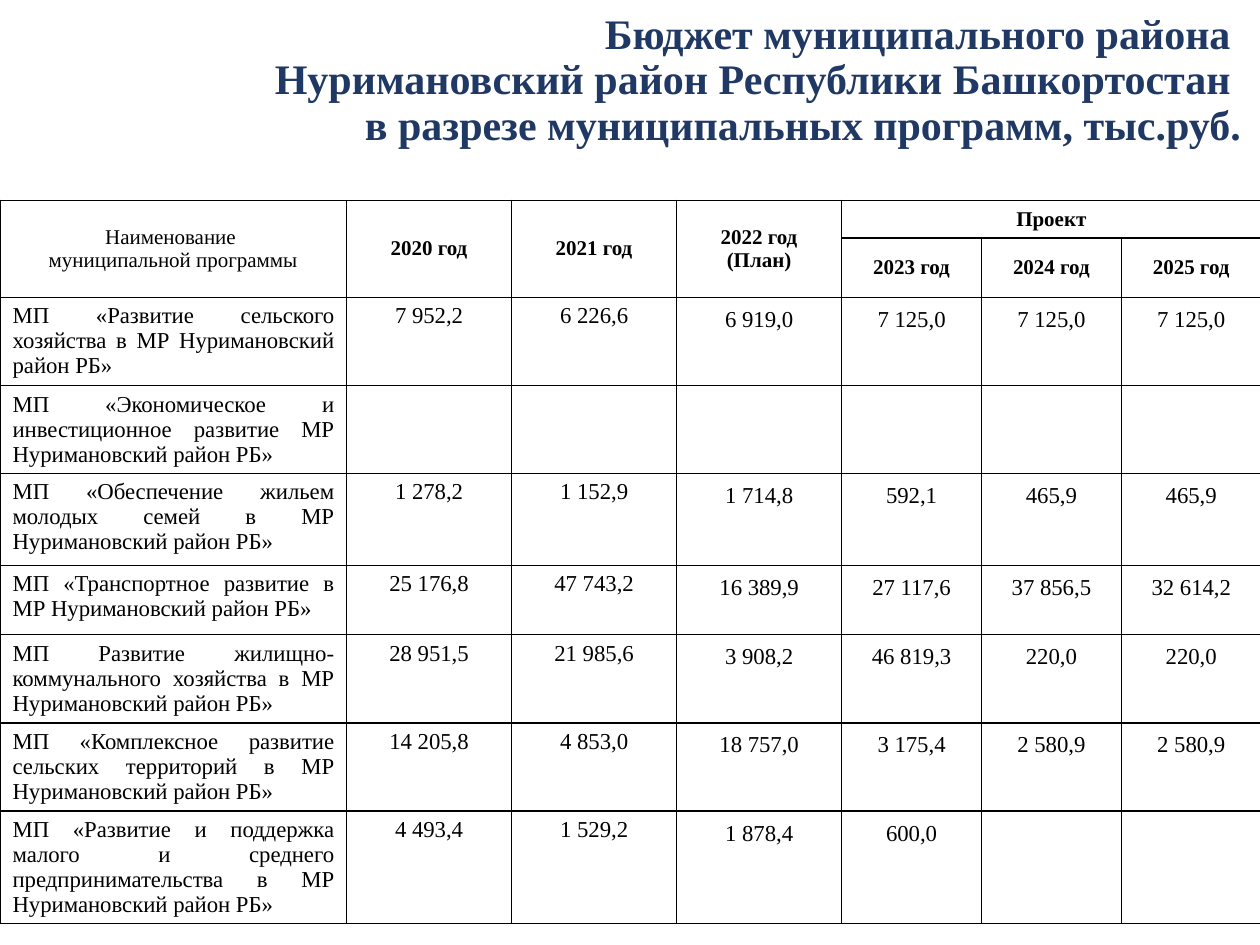
from dataclasses import dataclass

from lxml import etree
from pptx import Presentation
from pptx.dml.color import RGBColor
from pptx.enum import text
from pptx.oxml import ns
from pptx.util import Inches, Pt

ALIGN = text.PP_ALIGN
MID = text.MSO_ANCHOR.MIDDLE
TOP = text.MSO_ANCHOR.TOP


@dataclass(frozen=True)
class Theme:
    font: str = "Times New Roman"
    ink: str = "000000"
    navy: str = "203864"
    paper: str = "FFFFFF"
    title: int = 24
    head: int = 12
    body: int = 13
    rule: int = 1


TITLE = (
    "Бюджет муниципального района \v"
    "Нуримановский район Республики Башкортостан \v"
    "в разрезе муниципальных программ, тыс.руб."
)
COLS = [2.75] + [1.31] * 3 + [1.11] * 3
ROWS = [0.3, 0.47, 0.7, 0.69, 0.73, 0.55, 0.7, 0.7, 0.89]
HEADS = [
    ["Наименование \nмуниципальной программы", "2020 год", "2021 год", "2022 год (План)", "Проект", "", ""],
    ["", "", "", "", "2023 год", "2024 год", "2025 год"],
]
DATA = [
    ["МП «Развитие сельского хозяйства в МР Нуримановский район РБ»",
     "7 952,2", "6 226,6", "6 919,0", "7 125,0", "7 125,0", "7 125,0"],
    ["МП «Экономическое и инвестиционное развитие МР Нуримановский район РБ»",
     "", "", "", "", "", ""],
    ["МП «Обеспечение жильем молодых семей в МР Нуримановский район РБ»",
     "1 278,2", "1 152,9", "1 714,8", "592,1", "465,9", "465,9"],
    ["МП «Транспортное развитие в МР Нуримановский район РБ»",
     "25 176,8", "47 743,2", "16 389,9", "27 117,6", "37 856,5", "32 614,2"],
    ["МП Развитие жилищно-коммунального хозяйства в МР Нуримановский район РБ»",
     "28 951,5", "21 985,6", "3 908,2", "46 819,3", "220,0", "220,0"],
    ["МП «Комплексное развитие сельских территорий в МР Нуримановский район РБ»",
     "14 205,8", "4 853,0", "18 757,0", "3 175,4", "2 580,9", "2 580,9"],
    ["МП «Развитие и поддержка малого и среднего предпринимательства в МР Нуримановский район РБ»",
     "4 493,4", "1 529,2", "1 878,4", "600,0", "", ""],
]


def write(frame, words, *, font, size, color, bold=False, align=ALIGN.CENTER, space=1.0):
    frame.text = words
    for par in frame.paragraphs:
        par.alignment = align
        par.line_spacing = space
        for run in par.runs:
            run.font.name = font
            run.font.size = Pt(size)
            run.font.bold = bold
            run.font.color.rgb = RGBColor.from_string(color)


class Page:
    def __init__(self, deck, theme):
        self.theme = theme
        self.slide = deck.slides.add_slide(deck.slide_layouts[5])

    def title(self, words, left, top, width, height):
        box = self.slide.shapes.title
        box.left, box.top = Inches(left), Inches(top)
        box.width, box.height = Inches(width), Inches(height)
        frame = box.text_frame
        frame.word_wrap = True
        frame.auto_size = text.MSO_AUTO_SIZE.NONE
        frame.vertical_anchor = MID
        look = self.theme
        write(frame, words, font=look.font, size=look.title, color=look.navy,
              bold=True, align=ALIGN.RIGHT, space=0.9)

    def table(self, left, top, cols, rows):
        frame = self.slide.shapes.add_table(
            len(rows), len(cols), Inches(left), Inches(top),
            Inches(sum(cols)), Inches(sum(rows)))
        grid = frame.table
        grid.first_row = grid.horz_banding = False
        for col, width in zip(grid.columns, cols):
            col.width = Inches(width)
        for row, height in zip(grid.rows, rows):
            row.height = Inches(height)
        return grid

    def cell(self, cell, words, *, size, anchor=TOP, **form):
        look = self.theme
        self.border(cell)
        cell.fill.solid()
        cell.fill.fore_color.rgb = RGBColor.from_string(look.paper)
        cell.vertical_anchor = anchor
        if words:
            write(cell.text_frame, words, font=look.font, size=size, color=look.ink, **form)

    def border(self, cell):
        props = cell._tc.get_or_add_tcPr()
        for side in ("lnL", "lnR", "lnT", "lnB"):
            line = etree.SubElement(props, ns.qn(f"a:{side}"), w=str(Pt(self.theme.rule)))
            fill = etree.SubElement(line, ns.qn("a:solidFill"))
            etree.SubElement(fill, ns.qn("a:srgbClr"), val=self.theme.ink)


def main():
    deck = Presentation()
    deck.slide_width, deck.slide_height = Inches(10), Inches(7.5)
    theme = Theme()
    page = Page(deck, theme)
    page.title(TITLE, 0, 0.21, 9.95, 0.87)
    grid = page.table(0, 1.59, COLS, ROWS)
    for r, row in enumerate(HEADS + DATA):
        for c, words in enumerate(row):
            if r < len(HEADS):
                form = dict(size=theme.head, anchor=MID, bold=c > 0)
            else:
                form = dict(size=theme.body, space=1.15 if c > 2 else 1.0,
                            align=ALIGN.CENTER if c else ALIGN.JUSTIFY)
            page.cell(grid.cell(r, c), words, **form)
    for c in range(4):
        grid.cell(0, c).merge(grid.cell(1, c))
    grid.cell(0, 4).merge(grid.cell(0, 6))
    deck.save("out.pptx")


if __name__ == "__main__":
    main()
